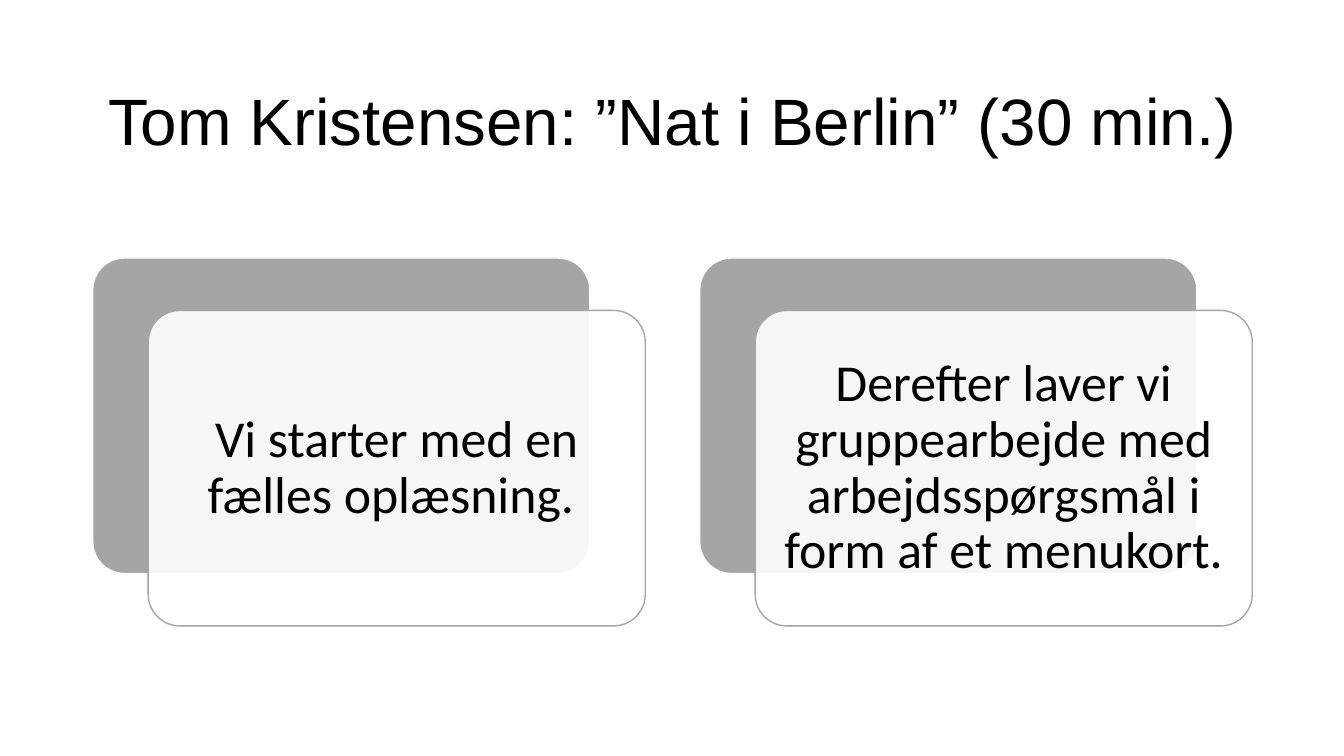
from lxml.etree import SubElement
from pptx import Presentation
from pptx.dml.color import RGBColor
from pptx.enum.shapes import MSO_SHAPE
from pptx.enum.text import MSO_ANCHOR, MSO_AUTO_SIZE, PP_ALIGN
from pptx.oxml.ns import qn
from pptx.util import Inches, Pt

COLORS = {"text": "000000", "gray": "A5A5A5", "white": "FFFFFF"}
STEPS = [
    "Vi starter med en fælles oplæsning. ",
    "Derefter laver vi gruppearbejde med arbejdsspørgsmål i form af et menukort. ",
]
LEFT, TOP, PITCH = 0.92, 2.56, 6.02
WIDTH, HEIGHT = 4.93, 3.13
SHIFT_X, SHIFT_Y = 0.55, 0.52
INSET = 0.09


def color(name):
    return RGBColor.from_string(COLORS[name])


def place(shape, left, top, width, height):
    shape.left, shape.top = Inches(left), Inches(top)
    shape.width, shape.height = Inches(width), Inches(height)


def write(frame, text, font, size):
    """Fill a frame with one centred paragraph."""
    frame.word_wrap = True
    frame.auto_size = MSO_AUTO_SIZE.NONE
    frame.vertical_anchor = MSO_ANCHOR.MIDDLE
    para = frame.paragraphs[0]
    para.alignment = PP_ALIGN.CENTER
    para.line_spacing = 0.9
    run = para.add_run()
    run.text = text
    run.font.name = font
    run.font.size = Pt(size)
    run.font.color.rgb = color("text")


def add_title(slide, text):
    title = slide.shapes.title
    place(title, LEFT, 0.61, 11.5, 1.24)
    write(title.text_frame, text, "Arial", 46.8)


def add_panel(slide, left, top, fill, line, alpha=None):
    panel = slide.shapes.add_shape(
        MSO_SHAPE.ROUNDED_RECTANGLE,
        Inches(left), Inches(top), Inches(WIDTH), Inches(HEIGHT))
    panel.adjustments[0] = 0.1
    panel.shadow.inherit = False
    panel.fill.solid()
    panel.fill.fore_color.rgb = color(fill)
    panel.line.color.rgb = color(line)
    panel.line.width = Pt(1)
    if alpha is not None:
        tint = panel.fill._xPr.find(qn("a:solidFill"))[0]
        SubElement(tint, qn("a:alpha")).set("val", str(alpha * 1000))


def add_label(slide, left, top, text):
    box = slide.shapes.add_textbox(
        Inches(left + INSET), Inches(top + INSET),
        Inches(WIDTH - 2 * INSET), Inches(HEIGHT - 2 * INSET))
    frame = box.text_frame
    frame.margin_left = frame.margin_right = Inches(0.15)
    frame.margin_top = frame.margin_bottom = Inches(0.15)
    write(frame, text, "Calibri", 37)


def add_card(slide, left, text):
    """Draw a gray panel, the sheet in front of it and its text."""
    front, top = left + SHIFT_X, TOP + SHIFT_Y
    add_panel(slide, left, TOP, "gray", "white")
    add_panel(slide, front, top, "white", "gray", alpha=90)
    add_label(slide, front, top, text)


def main():
    deck = Presentation()
    deck.slide_width, deck.slide_height = Inches(13.33), Inches(7.5)
    slide = deck.slides.add_slide(deck.slide_layouts[5])

    # Title
    add_title(slide, "Tom Kristensen: ”Nat i Berlin” (30 min.)")

    # Step cards
    for index, text in enumerate(STEPS):
        add_card(slide, LEFT + index * PITCH, text)

    deck.save("out.pptx")


if __name__ == "__main__":
    main()
